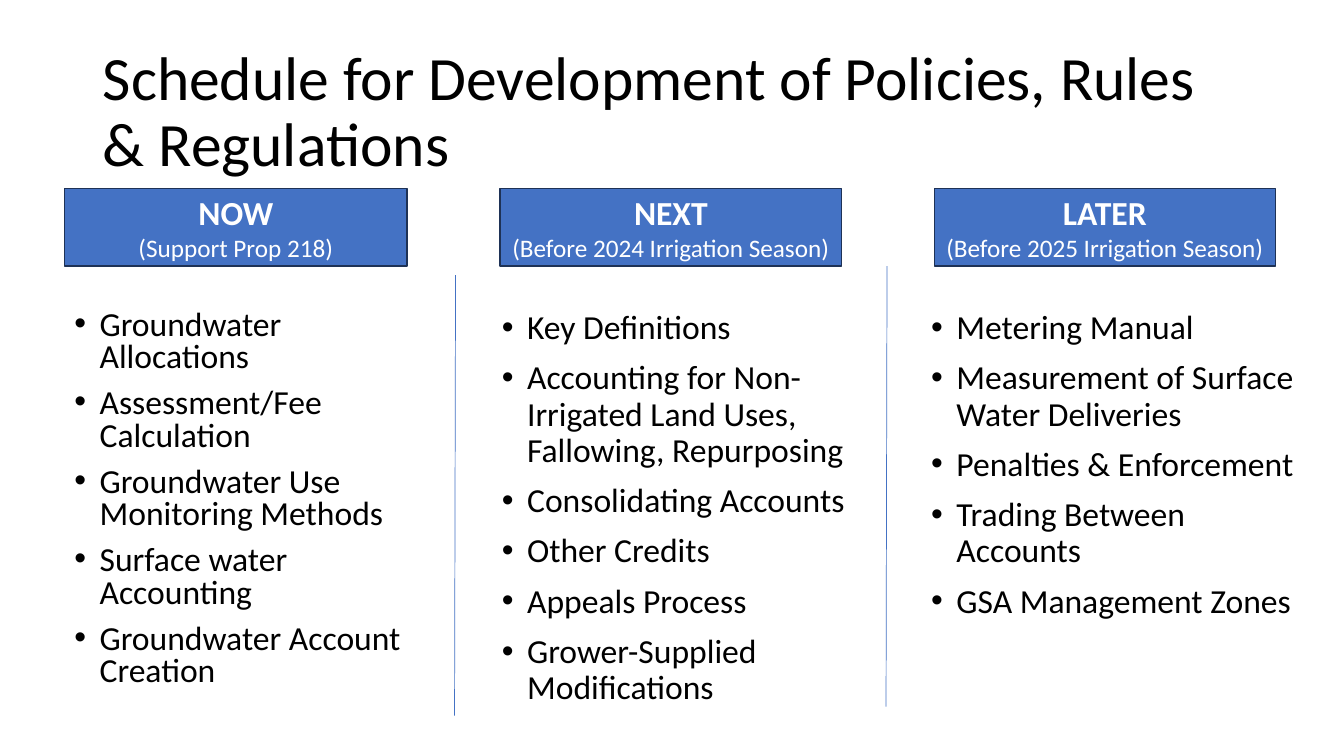
from dataclasses import dataclass

import pptx
import pptx.dml.color
import pptx.enum.shapes
import pptx.enum.text
import pptx.oxml
import pptx.oxml.ns
import pptx.util

Pt = pptx.util.Pt
ALIGN = pptx.enum.text.PP_ALIGN
MIDDLE = pptx.enum.text.MSO_ANCHOR.MIDDLE
FIXED = pptx.enum.text.MSO_AUTO_SIZE.NONE

HUES = {"text": "000000", "head": "4472C4", "edge": "1E3256", "white": "FFFFFF"}
HEAD_TOP, HEAD_HIGH = 134.8, 55.3
LIST_TOP = 218.2
RULE_HIGH = 314.6
INDENT = 18

TITLE = {"size": Pt(44), "name": "Calibri", "bold": False}
STAGE = {"size": Pt(24), "name": "Calibri", "bold": True}
DATE = {"size": Pt(18), "name": "Calibri", "bold": False}
ITEM = {"size": Pt(24), "name": "Calibri", "bold": False}


@dataclass
class Phase:
    name: str
    date: str
    head_left: float
    head_wide: float
    list_left: float
    list_wide: float
    list_high: float
    pitch: float
    items: list[str]


@dataclass
class Rule:
    left: float
    top: float


PHASES = [
    Phase("NOW", "(Support Prop 218)", 46.1, 244.8, 46.1, 261.4, 293, 0.8, [
        "Groundwater Allocations",
        "Assessment/Fee Calculation",
        "Groundwater Use Monitoring Methods",
        "Surface water Accounting",
        "Groundwater Account Creation",
    ]),
    Phase("NEXT", "(Before 2024 Irrigation Season)", 357.1, 244.1, 351.4, 260.6, 275.8, 0.9, [
        "Key Definitions",
        "Accounting for Non-Irrigated Land Uses, Fallowing, Repurposing",
        "Consolidating Accounts",
        "Other Credits",
        "Appeals Process",
        "Grower-Supplied Modifications",
    ]),
    Phase("LATER", "(Before 2025 Irrigation Season)", 667.4, 243.6, 658.1, 282.2, 275.8, 0.9, [
        "Metering Manual",
        "Measurement of Surface Water Deliveries",
        "Penalties & Enforcement",
        "Trading Between Accounts",
        "GSA Management Zones",
    ]),
]
RULES = [Rule(325.4, 196.6), Rule(633.6, 190.1)]


def shade(hue: str) -> pptx.dml.color.RGBColor:
    return pptx.dml.color.RGBColor.from_string(HUES[hue])


def style(font, form: dict, hue: str) -> None:
    for key, value in form.items():
        setattr(font, key, value)
    font.color.rgb = shade(hue)


def add_title(slide, text: str) -> None:
    title = slide.shapes.title
    place = {"left": 66.2, "top": 28.8, "width": 828, "height": 104.4}
    for key, value in place.items():
        setattr(title, key, Pt(value))
    frame = title.text_frame
    frame.text = text
    frame.word_wrap, frame.auto_size, frame.vertical_anchor = True, FIXED, MIDDLE
    line = frame.paragraphs[0]
    line.alignment, line.line_spacing = ALIGN.LEFT, 0.9
    style(line.runs[0].font, TITLE, "text")


def add_head(slide, phase: Phase) -> None:
    box = slide.shapes.add_shape(
        pptx.enum.shapes.MSO_SHAPE.RECTANGLE,
        Pt(phase.head_left), Pt(HEAD_TOP), Pt(phase.head_wide), Pt(HEAD_HIGH))
    box.shadow.inherit = False
    box.fill.solid()
    box.fill.fore_color.rgb = shade("head")
    box.line.color.rgb = shade("edge")
    box.line.width = Pt(1)
    box.text_frame.vertical_anchor = MIDDLE
    line = box.text_frame.paragraphs[0]
    line.alignment = ALIGN.CENTER
    stage = line.add_run()
    stage.text = phase.name
    style(stage.font, STAGE, "white")
    line.add_line_break()
    date = line.add_run()
    date.text = phase.date
    style(date.font, DATE, "white")


def add_list(slide, phase: Phase) -> None:
    box = slide.shapes.add_textbox(
        Pt(phase.list_left), Pt(LIST_TOP), Pt(phase.list_wide), Pt(phase.list_high))
    frame = box.text_frame
    frame.word_wrap = True
    for index, item in enumerate(phase.items):
        line = frame.add_paragraph() if index else frame.paragraphs[0]
        line.text = item
        line.line_spacing = phase.pitch
        line.space_before = Pt(10 if index else 0)
        props = line._p.get_or_add_pPr()
        props.set("marL", str(Pt(INDENT)))
        props.set("indent", str(-Pt(INDENT)))
        space = pptx.oxml.ns.nsdecls("a")
        for mark in ('buFont {} typeface="Arial"', 'buChar {} char="•"'):
            props.append(pptx.oxml.parse_xml(f"<a:{mark.format(space)}/>"))
        style(line.runs[0].font, ITEM, "text")


def add_rule(slide, rule: Rule) -> None:
    line = slide.shapes.add_connector(
        pptx.enum.shapes.MSO_CONNECTOR.STRAIGHT,
        Pt(rule.left), Pt(rule.top), Pt(rule.left - 0.7), Pt(rule.top + RULE_HIGH))
    line.line.color.rgb = shade("head")
    line.line.width = Pt(0.5)
    space = pptx.oxml.ns.nsdecls("a")
    line._element.spPr.append(pptx.oxml.parse_xml(f"<a:effectLst {space}/>"))


def main() -> None:
    deck = pptx.Presentation()
    deck.slide_width, deck.slide_height = Pt(960), Pt(540)
    slide = deck.slides.add_slide(deck.slide_layouts[5])
    add_title(slide, "Schedule for Development of Policies, Rules & Regulations")
    for phase in PHASES:
        add_list(slide, phase)
    for rule in RULES:
        add_rule(slide, rule)
    for phase in PHASES:
        add_head(slide, phase)
    deck.save("out.pptx")


if __name__ == "__main__":
    main()
